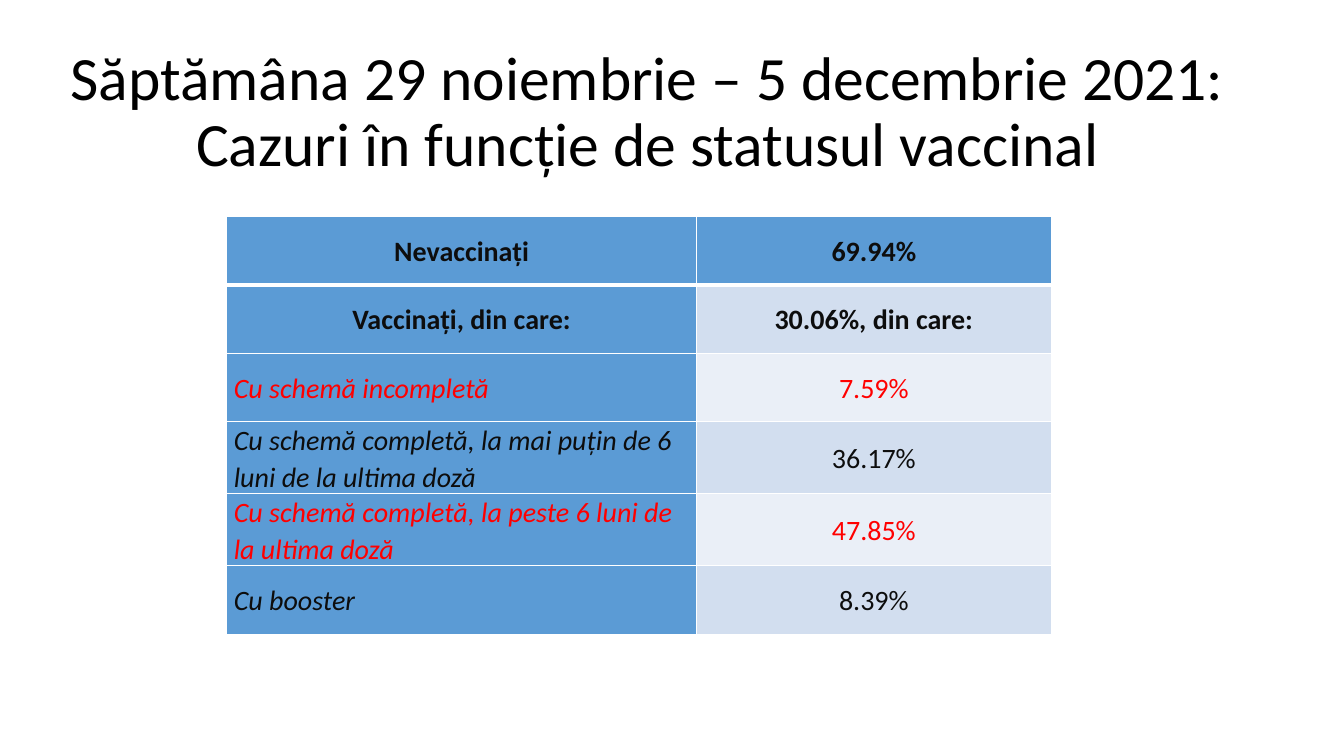
"""Builds a slide with a table of weekly cases by vaccination status."""
from lxml.etree import SubElement
from pptx import Presentation
from pptx.dml.color import RGBColor
from pptx.enum.text import MSO_ANCHOR, PP_ALIGN
from pptx.oxml.ns import qn
from pptx.util import Pt

BLACK = RGBColor(0x00, 0x00, 0x00)
INK = RGBColor(0x0D, 0x0D, 0x0D)
RED = RGBColor(0xFF, 0x00, 0x00)
WHITE = RGBColor(0xFF, 0xFF, 0xFF)
BLUE = RGBColor(0x5B, 0x9B, 0xD5)
BANDS = [RGBColor(0xEA, 0xEF, 0xF7), RGBColor(0xD2, 0xDE, 0xEF)]


def write(frame, text, size=20, color=INK, bold=False, italic=False,
          align=PP_ALIGN.CENTER, spacing=1.07):
    """Put one formatted paragraph into a text frame."""
    para = frame.paragraphs[0]
    para.alignment = align
    para.line_spacing = spacing
    span = para.add_run()
    span.text = text
    span.font.name = "Calibri"
    span.font.size = Pt(size)
    span.font.bold = bold
    span.font.italic = italic
    span.font.color.rgb = color


def add_border(cell, side, width):
    """Draw a white line on one side of a table cell."""
    line = SubElement(cell._tc.get_or_add_tcPr(), qn(f"a:ln{side}"), w=str(Pt(width)))
    fill = SubElement(line, qn("a:solidFill"))
    SubElement(fill, qn("a:srgbClr"), val=str(WHITE))


deck = Presentation()
deck.slide_width, deck.slide_height = Pt(960), Pt(540)
page = deck.slides.add_slide(deck.slide_layouts[6])

title = page.shapes.add_textbox(Pt(32.4), Pt(28.8), Pt(861), Pt(104.4)).text_frame
title.word_wrap = True
title.vertical_anchor = MSO_ANCHOR.MIDDLE
write(title, "Săptămâna 29 noiembrie – 5 decembrie 2021: Cazuri în funcție de statusul vaccinal",
      size=44, color=BLACK, spacing=0.9)

cases = [
    ("Nevaccinați", "69.94%", INK),
    ("Vaccinați, din care:", "30.06%, din care:", INK),
    ("Cu schemă incompletă", "7.59%", RED),
    ("Cu schemă completă, la mai puțin de 6 luni de la ultima doză", "36.17%", INK),
    ("Cu schemă completă, la peste 6 luni de la ultima doză", "47.85%", RED),
    ("Cu booster", "8.39%", INK),
]
table = page.shapes.add_table(len(cases), 2, Pt(162), Pt(154.4), Pt(589), Pt(294)).table
table.columns[0].width, table.columns[1].width = Pt(335.5), Pt(253.5)

for row, (status, share, color) in enumerate(cases):
    table.rows[row].height = Pt(49)
    is_group = row < 2
    for column, text in enumerate((status, share)):
        cell = table.cell(row, column)
        is_detail = column == 0 and not is_group
        cell.margin_left = cell.margin_right = Pt(5)
        cell.margin_top = cell.margin_bottom = Pt(0)
        cell.vertical_anchor = MSO_ANCHOR.MIDDLE
        write(cell.text_frame, text, color=color, bold=is_group, italic=is_detail,
              align=PP_ALIGN.LEFT if is_detail else PP_ALIGN.CENTER)
        for side in "LRTB":
            thick = (row, side) in [(0, "B"), (1, "T")]
            add_border(cell, side, 3 if thick else 1)
        cell.fill.solid()
        cell.fill.fore_color.rgb = BLUE if column == 0 or row == 0 else BANDS[row % 2]

deck.save("out.pptx")
